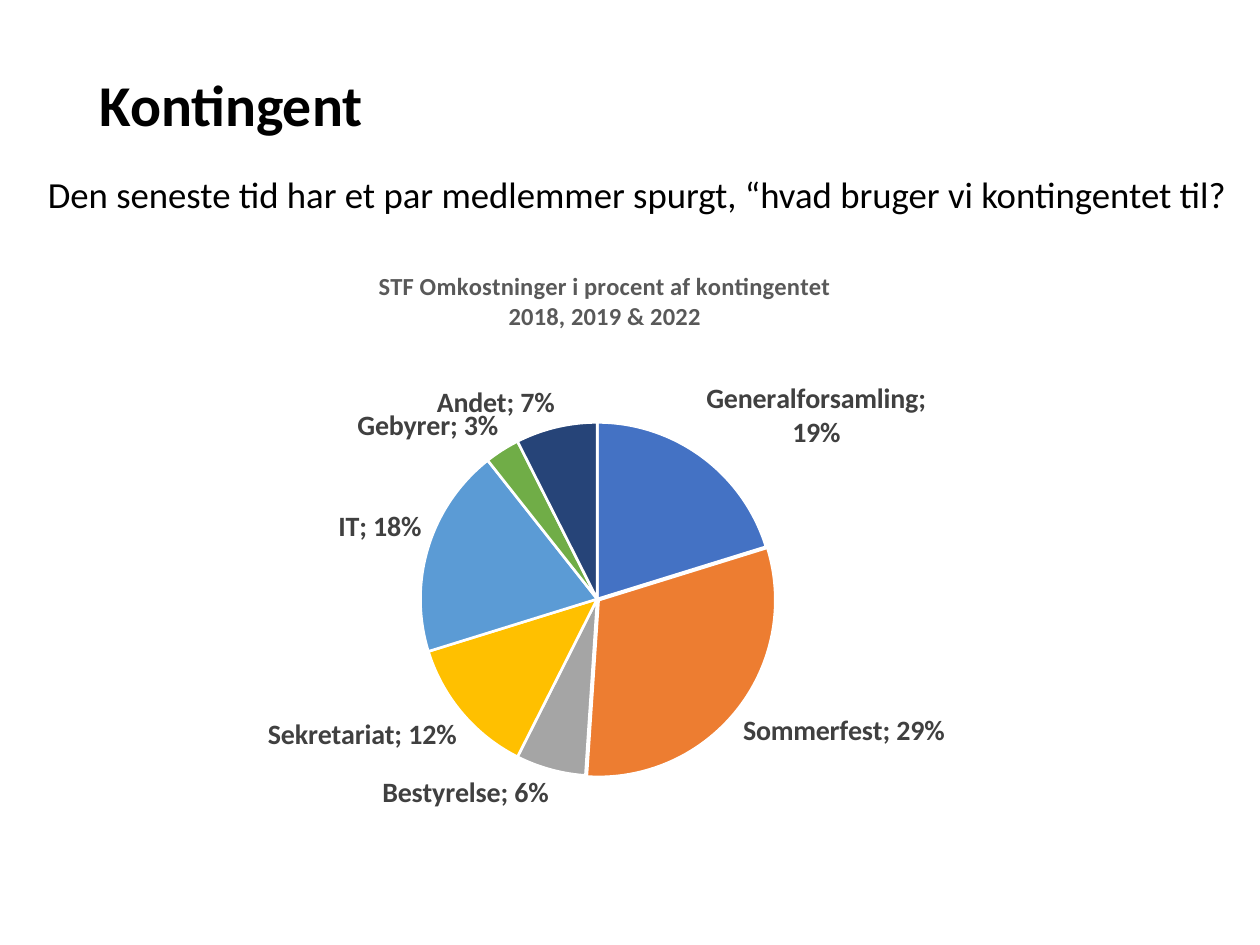
from pptx import Presentation
from pptx.chart.data import CategoryChartData
from pptx.dml.color import RGBColor
from pptx.enum.chart import XL_CHART_TYPE, XL_LABEL_POSITION
from pptx.enum.text import MSO_ANCHOR, MSO_AUTO_SIZE, PP_ALIGN
from pptx.oxml import parse_xml
from pptx.oxml.ns import nsdecls, qn
from pptx.util import Cm, Pt

PIE = XL_CHART_TYPE.PIE
OUTSIDE_END = XL_LABEL_POSITION.OUTSIDE_END
TOP, MIDDLE = MSO_ANCHOR.TOP, MSO_ANCHOR.MIDDLE
NO_AUTOFIT = MSO_AUTO_SIZE.NONE
LEFT = PP_ALIGN.LEFT

BLACK = RGBColor(0x00, 0x00, 0x00)
WHITE = RGBColor(0xFF, 0xFF, 0xFF)
TITLE_GRAY = RGBColor(0x59, 0x59, 0x59)
LABEL_GRAY = RGBColor(0x40, 0x40, 0x40)
BLUE = RGBColor(0x44, 0x72, 0xC4)
ORANGE = RGBColor(0xED, 0x7D, 0x31)
GRAY = RGBColor(0xA5, 0xA5, 0xA5)
YELLOW = RGBColor(0xFF, 0xC0, 0x00)
LIGHT_BLUE = RGBColor(0x5B, 0x9B, 0xD5)
GREEN = RGBColor(0x70, 0xAD, 0x47)
NAVY = RGBColor(0x26, 0x44, 0x78)

# Category, share of the fee, slice colour
COSTS = [
    ("Generalforsamling", 0.19, BLUE),
    ("Sommerfest", 0.29, ORANGE),
    ("Bestyrelse", 0.06, GRAY),
    ("Sekretariat", 0.12, YELLOW),
    ("IT", 0.18, LIGHT_BLUE),
    ("Gebyrer", 0.03, GREEN),
    ("Andet", 0.07, NAVY),
]
EXPLODED_SLICE = 1


def format_font(font, size, color=BLACK, bold=False, name="Calibri"):
    font.name = name
    font.size = Pt(size)
    font.bold = bold
    font.color.rgb = color


def write_text(text_frame, text, line_spacing=None, align=None, **font_format):
    """Write one paragraph per line of text."""
    for index, line in enumerate(text.split("\n")):
        paragraph = text_frame.paragraphs[0] if index == 0 else text_frame.add_paragraph()
        paragraph.alignment = align
        paragraph.line_spacing = line_spacing
        run = paragraph.add_run()
        run.text = line
        format_font(run.font, **font_format)


def manual_layout(inner=False, **fractions):
    """Chart layout element with x, y, w and h as parts of the chart size."""
    target = '<c:layoutTarget val="inner"/>' if inner else ""
    modes = '<c:xMode val="edge"/><c:yMode val="edge"/>'
    values = "".join(f'<c:{key} val="{value}"/>' for key, value in fractions.items())
    return parse_xml(
        f'<c:layout {nsdecls("c")}><c:manualLayout>{target}{modes}{values}'
        "</c:manualLayout></c:layout>"
    )


def replace_layout(parent, layout, index):
    for old_layout in parent.findall(qn("c:layout")):
        parent.remove(old_layout)
    parent.insert(index, layout)


class SlideBuilder:
    def __init__(self, slide):
        self.slide = slide

    def placeholder(self, shape, text, left, top, width, height, anchor, **text_format):
        shape.left, shape.top = Cm(left), Cm(top)
        shape.width, shape.height = Cm(width), Cm(height)
        frame = shape.text_frame
        frame.auto_size = NO_AUTOFIT
        frame.word_wrap = True
        frame.vertical_anchor = anchor
        write_text(frame, text, line_spacing=0.9, align=LEFT, **text_format)
        return frame

    def title(self, text, *box):
        self.placeholder(self.slide.shapes.title, text, *box, MIDDLE, size=33, bold=True)

    def body(self, text, *box):
        frame = self.placeholder(self.slide.placeholders[1], text, *box, TOP, size=21)
        for paragraph in frame.paragraphs:
            paragraph.space_before = Pt(0)
            properties = paragraph._p.get_or_add_pPr()
            properties.set("marL", "0")
            properties.set("indent", "0")
            properties.append(parse_xml(f'<a:buNone {nsdecls("a")}/>'))

    def pie(self, title, costs, left, top, width, height):
        chart_data = CategoryChartData(number_format="0%")
        chart_data.categories = [category for category, _, _ in costs]
        chart_data.add_series("Series 1", [share for _, share, _ in costs])
        chart = self.slide.shapes.add_chart(
            PIE, Cm(left), Cm(top), Cm(width), Cm(height), chart_data
        ).chart
        format_font(chart.font, 10)
        chart.has_legend = False

        # Chart title
        chart.has_title = True
        write_text(chart.chart_title.text_frame, title, size=14, color=TITLE_GRAY, bold=True)
        replace_layout(chart.element.xpath(".//c:title")[0], manual_layout(x=0.3, y=0.01), 1)

        # Slices
        plot = chart.plots[0]
        plot.vary_by_categories = True
        for index, (_, _, color) in enumerate(costs):
            slice_format = plot.series[0].points[index].format
            slice_format.fill.solid()
            slice_format.fill.fore_color.rgb = color
            slice_format.line.color.rgb = WHITE
            slice_format.line.width = Pt(1.5)
        point = chart.element.xpath(f".//c:dPt[c:idx/@val='{EXPLODED_SLICE}']")[0]
        point.find(qn("c:spPr")).addprevious(
            parse_xml(f'<c:explosion {nsdecls("c")} val="1"/>')
        )
        replace_layout(
            chart.element.xpath(".//c:plotArea")[0],
            manual_layout(inner=True, x=0.34, y=0.28, w=0.31, h=0.62), 0,
        )

        # Labels
        plot.has_data_labels = True
        labels = plot.data_labels
        format_font(labels.font, 16, LABEL_GRAY, bold=True)
        labels.number_format = "0%"
        labels.number_format_is_linked = False
        labels.position = OUTSIDE_END
        labels.show_category_name = True
        labels.show_value = True
        labels.show_percentage = False
        separator = parse_xml(f'<c:separator {nsdecls("c")}>; </c:separator>')
        chart.element.xpath(".//c:dLbls/c:showBubbleSize")[0].addnext(separator)


def main():
    presentation = Presentation()
    presentation.slide_width, presentation.slide_height = Cm(25.4), Cm(19.05)
    builder = SlideBuilder(presentation.slides.add_slide(presentation.slide_layouts[1]))
    builder.title("Kontingent", 1.75, 1.02, 21.9, 2.31)
    builder.body(
        "Den seneste tid har et par medlemmer spurgt, “hvad bruger vi kontingentet til?",
        0.71, 3.43, 24.69, 1.4,
    )
    builder.pie(
        "STF Omkostninger i procent af kontingentet\n2018, 2019 & 2022",
        COSTS, 0.66, 5.23, 22.99, 11.61,
    )
    presentation.save("out.pptx")


if __name__ == "__main__":
    main()
